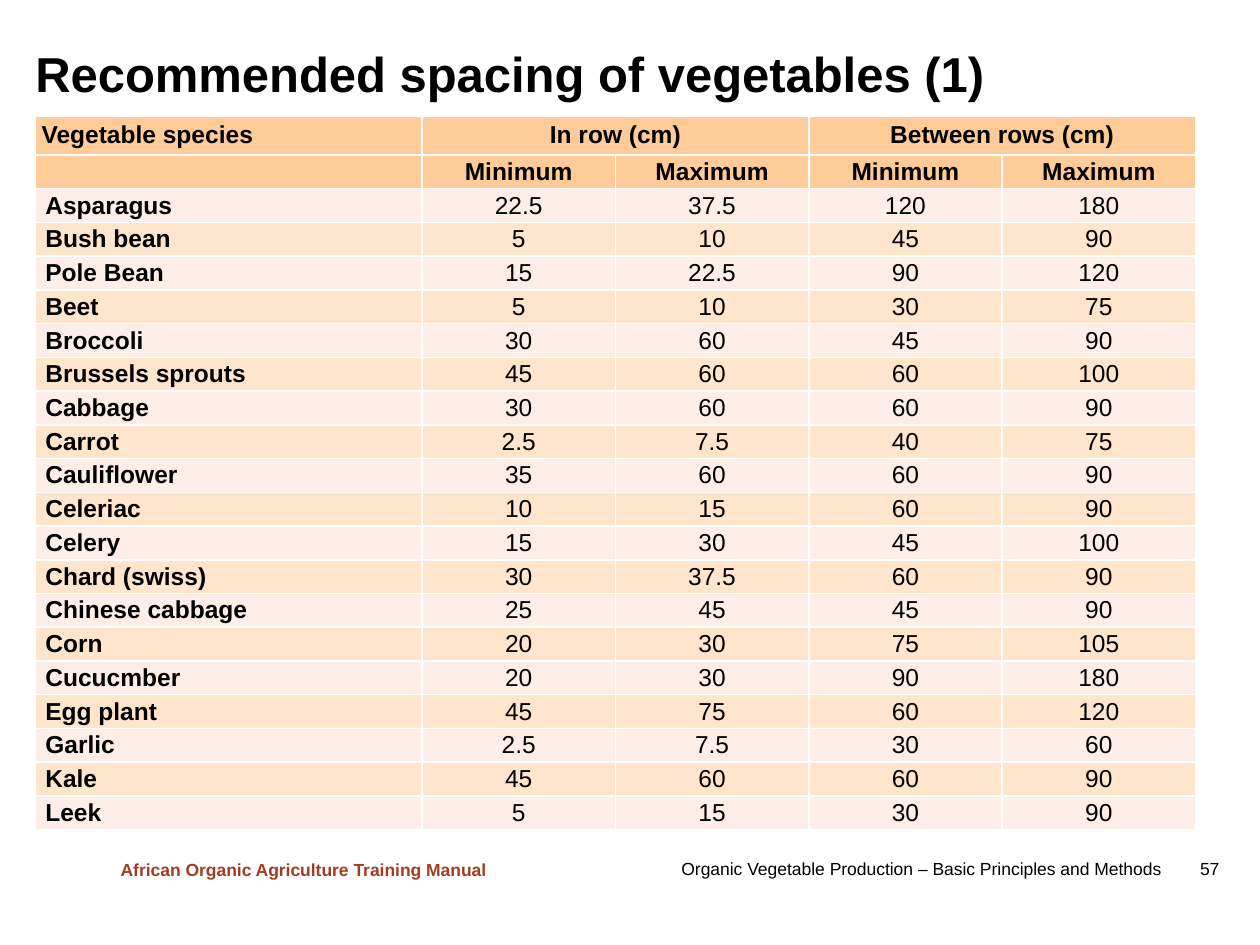
"""Build a slide with a table of recommended vegetable spacing."""
from lxml.etree import SubElement
from pptx import Presentation
from pptx.dml.color import RGBColor
from pptx.enum.text import MSO_ANCHOR as Anchor, PP_ALIGN as Align
from pptx.oxml.ns import qn
from pptx.util import Inches, Pt

BLACK = RGBColor(0x00, 0x00, 0x00)
BROWN = RGBColor(0xA2, 0x3D, 0x25)
ORANGE = RGBColor(0xFF, 0x99, 0x33)
PEACH = RGBColor(0xFF, 0xCC, 0x99)
PINK = RGBColor(0xFF, 0xEE, 0xE7)
WHITE = RGBColor(0xFF, 0xFF, 0xFF)

TITLE = "Recommended spacing of vegetables (1)"
MANUAL = "African Organic Agriculture Training Manual"
CHAPTER = "Organic Vegetable Production – Basic Principles and Methods\t57"

HEADINGS = [
    ("Vegetable species", "In row (cm)", "", "Between rows (cm)", ""),
    ("", "Minimum", "Maximum", "Minimum", "Maximum"),
]
SPACINGS = [
    ("Asparagus", "22.5", "37.5", "120", "180"),
    ("Bush bean", "5", "10", "45", "90"),
    ("Pole Bean", "15", "22.5", "90", "120"),
    ("Beet", "5", "10", "30", "75"),
    ("Broccoli", "30", "60", "45", "90"),
    ("Brussels sprouts", "45", "60", "60", "100"),
    ("Cabbage", "30", "60", "60", "90"),
    ("Carrot", "2.5", "7.5", "40", "75"),
    ("Cauliflower", "35", "60", "60", "90"),
    ("Celeriac", "10", "15", "60", "90"),
    ("Celery", "15", "30", "45", "100"),
    ("Chard (swiss)", "30", "37.5", "60", "90"),
    ("Chinese cabbage", "25", "45", "45", "90"),
    ("Corn", "20", "30", "75", "105"),
    ("Cucucmber", "20", "30", "90", "180"),
    ("Egg plant", "45", "75", "60", "120"),
    ("Garlic", "2.5", "7.5", "30", "60"),
    ("Kale", "45", "60", "60", "90"),
    ("Leek", "5", "15", "30", "90"),
]
ROWS = HEADINGS + SPACINGS
TABLE_LEFT, TABLE_TOP, TABLE_WIDTH, TABLE_HEIGHT = 0.28, 0.92, 9.21, 5.67
FIRST_ROW_HEIGHT = 0.31
COLUMN_UNITS = (2, 1, 1, 1, 1)


def set_all(target, values):
    for name, value in values.items():
        setattr(target, name, value)


def write(para, text, size, bold=False, color=BLACK):
    if not text:
        SubElement(para._p, qn("a:endParaRPr"), sz=str(size * 100))
        return
    span = para.add_run()
    span.text = text
    set_all(span.font, {"name": "Arial", "size": Pt(size), "bold": bold})
    span.font.color.rgb = color


def add_text(page, place, text, frame_format, **font):
    box = page.shapes.add_textbox(*map(Inches, place))
    set_all(box.text_frame, frame_format)
    para = box.text_frame.paragraphs[0]
    write(para, text, **font)
    return box.text_frame, para


def add_borders(cell):
    properties = cell._tc.get_or_add_tcPr()
    for side in ("lnL", "lnR", "lnT", "lnB"):
        line = SubElement(properties, qn(f"a:{side}"), w=str(Pt(1)))
        fill = SubElement(line, qn("a:solidFill"))
        SubElement(fill, qn("a:srgbClr"), val=str(WHITE))


def paint(cell, color, opacity):
    cell.fill.solid()
    cell.fill.fore_color.rgb = color
    if opacity < 100:
        tone = cell._tc.tcPr.find(qn("a:solidFill")).find(qn("a:srgbClr"))
        SubElement(tone, qn("a:alpha"), val=str(opacity * 1000))


def row_fill(row):
    if row < len(HEADINGS):
        return ((PEACH, 100), (ORANGE, 50))[row]
    return (PEACH, 50) if row % 2 else (PINK, 100)


def add_spacing_table(page):
    place = (TABLE_LEFT, TABLE_TOP, TABLE_WIDTH, TABLE_HEIGHT)
    table = page.shapes.add_table(
        len(ROWS), len(COLUMN_UNITS), *map(Inches, place)).table
    set_all(table, {"first_row": False, "horz_banding": False})
    for column, units in zip(table.columns, COLUMN_UNITS):
        column.width = Inches(TABLE_WIDTH * units / sum(COLUMN_UNITS))
    row_height = (TABLE_HEIGHT - FIRST_ROW_HEIGHT) / (len(ROWS) - 1)
    for r, values in enumerate(ROWS):
        table.rows[r].height = Inches(row_height if r else FIRST_ROW_HEIGHT)
        heading = r < len(HEADINGS)
        for c, value in enumerate(values):
            cell = table.cell(r, c)
            indent = 0 if c else 0.05 if heading else 0.08
            set_all(cell, {
                "margin_left": Inches(indent), "margin_right": 0,
                "margin_top": 0, "margin_bottom": 0,
                "vertical_anchor": Anchor.MIDDLE,
            })
            add_borders(cell)
            paint(cell, *row_fill(r))
            para = cell.text_frame.paragraphs[0]
            para.alignment = Align.CENTER if c else Align.LEFT
            write(para, value, 14, bold=heading or c == 0)
    for c in (1, 3):
        table.cell(0, c).merge(table.cell(0, c + 1))


def main():
    deck = Presentation()
    set_all(deck, {"slide_width": Inches(10), "slide_height": Inches(7.5)})
    page = deck.slides.add_slide(deck.slide_layouts[6])

    _, para = add_text(
        page, (5.31, 6.76, 4.6, 0.27), CHAPTER,
        {"word_wrap": True, "vertical_anchor": Anchor.MIDDLE}, size=10)
    tabs = SubElement(para._p.get_or_add_pPr(), qn("a:tabLst"))
    SubElement(tabs, qn("a:tab"), pos=str(Inches(4.27)), algn="r")
    add_text(page, (0.86, 6.77, 3.14, 0.27), MANUAL,
             {"word_wrap": False}, size=10, bold=True, color=BROWN)
    add_text(page, (0.28, 0.26, 9.02, 0.69), TITLE,
             {"word_wrap": True, "vertical_anchor": Anchor.MIDDLE,
              "margin_left": 0, "margin_top": 0}, size=28, bold=True)
    add_spacing_table(page)
    deck.save("out.pptx")


if __name__ == "__main__":
    main()
